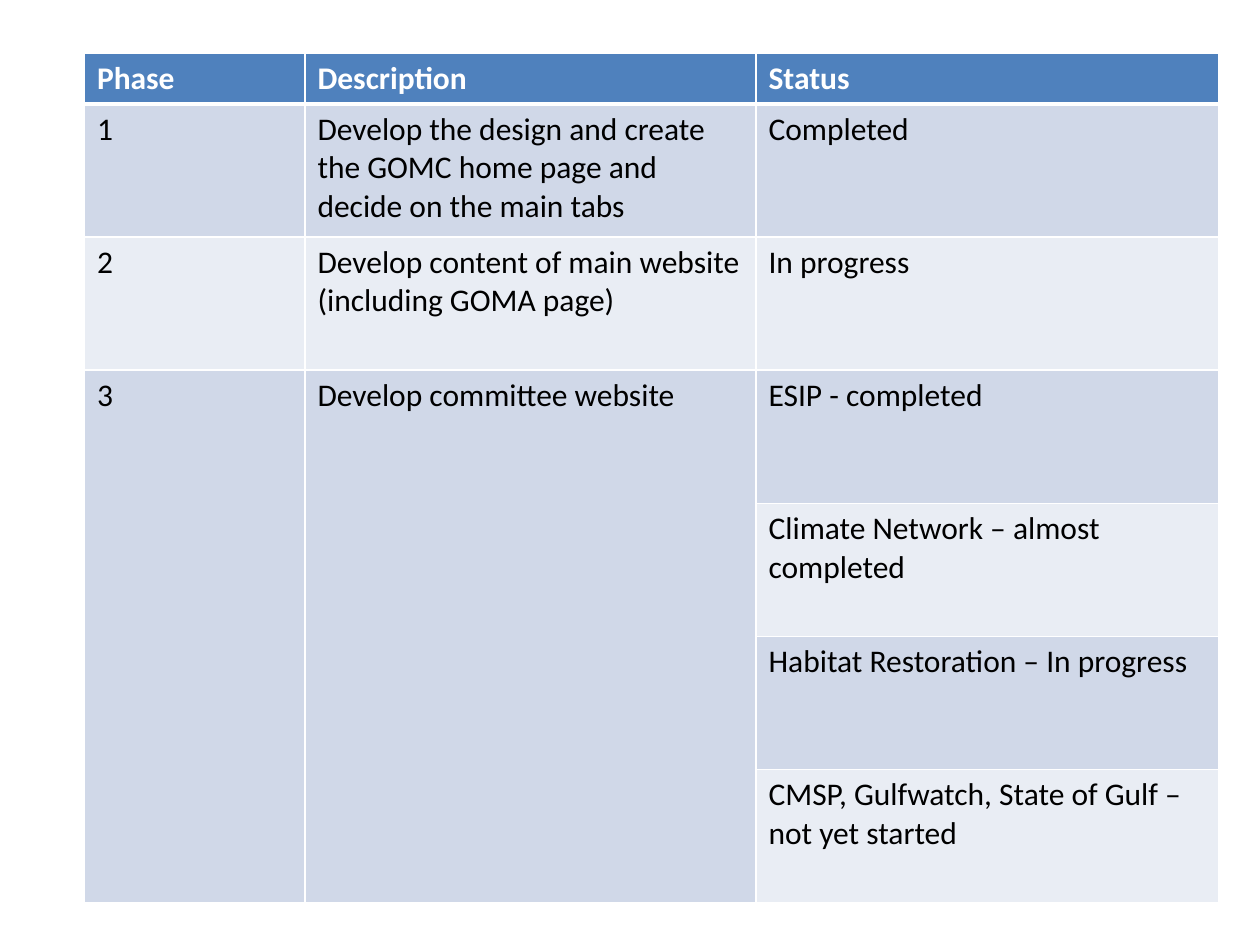
from lxml import etree
from pptx import Presentation
from pptx.oxml.ns import qn
from pptx.dml.color import RGBColor
from pptx.util import Inches, Pt

COLORS = {
    "header": "4F81BD",
    "band_dark": "D0D8E8",
    "band_light": "E9EDF4",
    "border": "FFFFFF",
    "header_text": "FFFFFF",
    "body_text": "000000",
}
FONT = "Calibri"
COLUMN_WIDTHS = (1.75, 3.58, 3.67)
HEADER_HEIGHT = 0.39
THIN, THICK = Pt(1), Pt(3)

ROWS = [
    ("Phase", "Description", "Status"),
    ("1", "Develop the design and create the GOMC home page and decide on the main tabs",
     "Completed"),
    ("2", "Develop content of main website (including GOMA page)", "In progress"),
    ("3", "Develop committee website", "ESIP - completed"),
    ("", "", "Climate Network – almost completed"),
    ("", "", "Habitat Restoration – In progress"),
    ("", "", "CMSP, Gulfwatch, State of Gulf – not yet started"),
]
COMMITTEE_ROW = 3


def set_borders(cell, top, bottom):
    """Draw all four cell borders; left and right are always thin."""
    properties = cell._tc.get_or_add_tcPr()
    widths = {"a:lnL": THIN, "a:lnR": THIN, "a:lnT": top, "a:lnB": bottom}
    for tag, width in widths.items():
        line = etree.SubElement(properties, qn(tag), w=str(width))
        fill = etree.SubElement(line, qn("a:solidFill"))
        etree.SubElement(fill, qn("a:srgbClr"), val=COLORS["border"])


def style_cell(cell, row_index, text):
    is_header = row_index == 0
    set_borders(cell,
                top=THICK if row_index == 1 else THIN,
                bottom=THICK if is_header else THIN)
    band = "header" if is_header else "band_dark" if row_index % 2 else "band_light"
    cell.fill.solid()
    cell.fill.fore_color.rgb = RGBColor.from_string(COLORS[band])
    cell.text = text
    font = cell.text_frame.paragraphs[0].font
    font.name = FONT
    font.size = Pt(18)
    font.bold = is_header
    font.color.rgb = RGBColor.from_string(
        COLORS["header_text" if is_header else "body_text"])


def add_phase_table(slide, left, top, width, height):
    table = slide.shapes.add_table(
        len(ROWS), len(COLUMN_WIDTHS), left, top, width, height).table
    for column, column_width in zip(table.columns, COLUMN_WIDTHS):
        column.width = Inches(column_width)

    header_height = Inches(HEADER_HEIGHT)
    body_height = (height - header_height) // (len(ROWS) - 1)
    for row_index, texts in enumerate(ROWS):
        table.rows[row_index].height = body_height if row_index else header_height
        for column_index, text in enumerate(texts):
            style_cell(table.cell(row_index, column_index), row_index, text)

    for column_index in (0, 1):
        table.cell(COMMITTEE_ROW, column_index).merge(
            table.cell(len(ROWS) - 1, column_index))


def main():
    presentation = Presentation()
    presentation.slide_width = Inches(10)
    presentation.slide_height = Inches(7.5)
    slide = presentation.slides.add_slide(presentation.slide_layouts[6])
    add_phase_table(slide, Inches(0.67), Inches(0.42), Inches(9), Inches(6.73))
    presentation.save("out.pptx")


if __name__ == "__main__":
    main()
